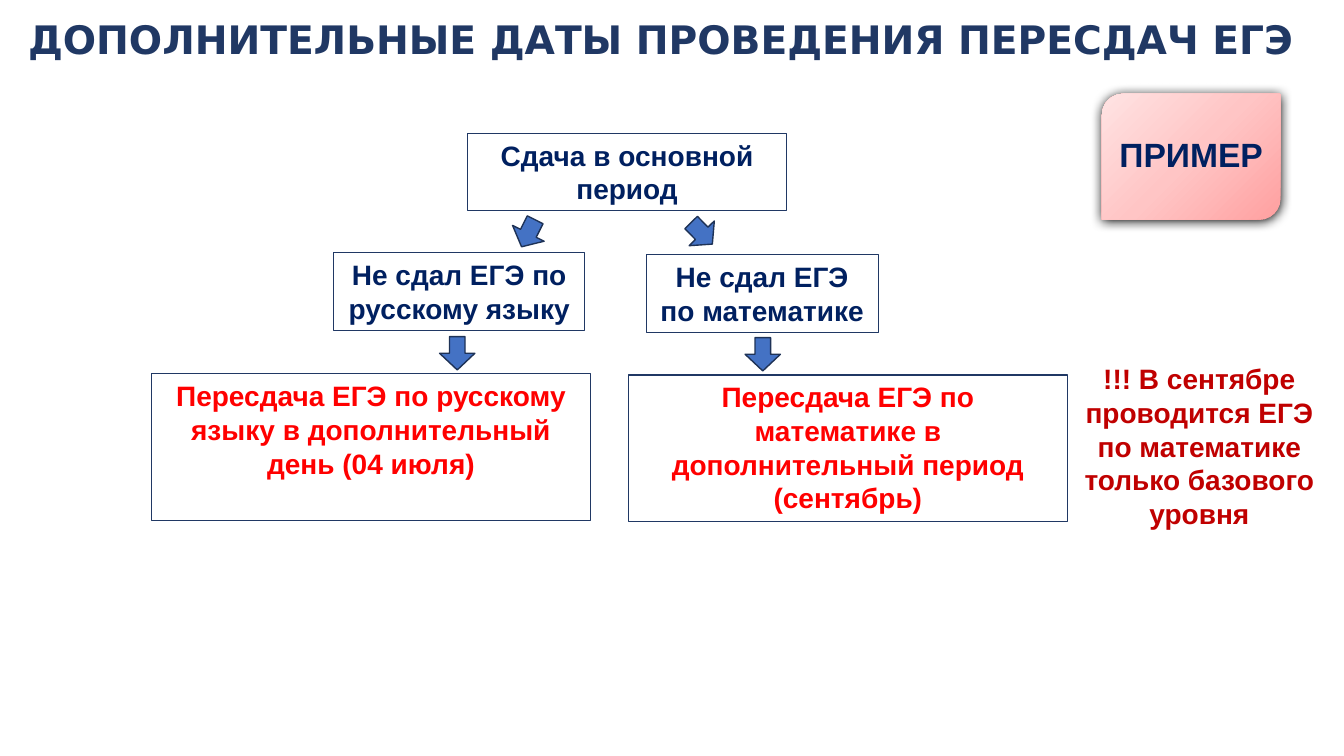
from dataclasses import dataclass

from lxml.etree import SubElement
from pptx import Presentation
from pptx.dml.color import RGBColor
from pptx.enum.shapes import MSO_SHAPE as Shape
from pptx.enum.text import MSO_ANCHOR as Anchor, PP_ALIGN as Align
from pptx.oxml import parse_xml
from pptx.oxml.ns import nsdecls, qn
from pptx.util import Inches, Pt


@dataclass(frozen=True)
class Theme:
    """Colours, fonts and type sizes of the slide."""
    navy: str = "203864"
    ink: str = "002060"
    alert: str = "FF0000"
    warning: str = "C00000"
    arrow: str = "4472C4"
    arrow_edge: str = "1E3256"
    shadow: str = "000000"
    badge: tuple = ((0, "FFA0A0"), (50, "FFC5C5"), (100, "FFE3E3"))
    title_font: str = "DejaVu Sans"
    body_font: str = "Arial"
    title_size: int = 28
    badge_size: int = 24
    body_size: int = 20


@dataclass(frozen=True)
class Box:
    """A rectangle in inches."""
    left: float
    top: float
    width: float
    height: float

    def inner(self, left, top, width, height):
        """Return a box placed relative to this one."""
        return Box(self.left + left, self.top + top, width, height)

    def lengths(self):
        """Return position and size as slide lengths."""
        return [Inches(value) for value in
                (self.left, self.top, self.width, self.height)]


THEME = Theme()


def write(shape, text, color, size=THEME.body_size, font=THEME.body_font,
          align=Align.CENTER, anchor=Anchor.TOP):
    """Fill a shape with one bold paragraph and return the paragraph."""
    frame = shape.text_frame
    frame.text = text
    frame.word_wrap = True
    frame.vertical_anchor = anchor
    paragraph = frame.paragraphs[0]
    paragraph.alignment = align
    run_font = paragraph.runs[0].font
    run_font.name = font
    run_font.size = Pt(size)
    run_font.bold = True
    run_font.color.rgb = RGBColor.from_string(color)
    return paragraph


def add_preset(slide, box, kind, edge=None, weight=1, fill=None):
    """Add a preset shape with a plain outline and fill."""
    shape = slide.shapes.add_shape(kind, *box.lengths())
    shape.shadow.inherit = False
    if fill:
        shape.fill.solid()
        shape.fill.fore_color.rgb = RGBColor.from_string(fill)
    else:
        shape.fill.background()
    if edge:
        shape.line.color.rgb = RGBColor.from_string(edge)
        shape.line.width = Pt(weight)
    else:
        shape.line.fill.background()
    return shape


def add_title(slide, box):
    """Add the slide heading."""
    shape = slide.shapes.add_textbox(*box.lengths())
    paragraph = write(shape, "ДОПОЛНИТЕЛЬНЫЕ ДАТЫ ПРОВЕДЕНИЯ ПЕРЕСДАЧ ЕГЭ",
                      THEME.navy, THEME.title_size, THEME.title_font,
                      Align.LEFT, Anchor.MIDDLE)
    paragraph.line_spacing = 0.9


def add_flowchart(slide, box):
    """Add the steps from the main exam period to the resits."""
    steps = (
        ((3.14, 0, 3.16, 0.77), "Сдача в основной период", THEME.ink),
        ((1.81, 1.19, 2.49, 0.77), "Не сдал ЕГЭ по русскому языку", THEME.ink),
        ((4.91, 1.21, 2.3, 0.77), "Не сдал ЕГЭ по математике", THEME.ink),
        ((0, 2.39, 4.36, 1.45),
         "Пересдача ЕГЭ по русскому языку в дополнительный день (04 июля)",
         THEME.alert),
        ((4.73, 2.4, 4.36, 1.45),
         "Пересдача ЕГЭ по математике в дополнительный период (сентябрь)",
         THEME.alert),
    )
    for place, text, color in steps:
        step = add_preset(slide, box.inner(*place), Shape.RECTANGLE,
                          THEME.navy, 0.75)
        write(step, text, color)

    arrows = (
        ((3.59, 0.82, 0.3, 0.35), 116.7, 0.5),
        ((5.31, 0.82, 0.3, 0.35), 45.5, 0.5),
        ((2.87, 2.01, 0.33, 0.35), 90, 0.44),
        ((5.9, 2.02, 0.33, 0.35), 90, 0.44),
    )
    for place, angle, shaft in arrows:
        arrow = add_preset(slide, box.inner(*place), Shape.RIGHT_ARROW,
                           THEME.arrow_edge, 1, THEME.arrow)
        arrow.rotation = angle
        arrow.adjustments[0] = shaft
        arrow.adjustments[1] = 0.5


def add_note(slide, box):
    """Add the remark about the September exam."""
    shape = slide.shapes.add_textbox(*box.lengths())
    write(shape,
          "!!! В сентябре проводится ЕГЭ по математике только базового уровня",
          THEME.warning)


def add_badge(slide, box):
    """Add the shaded example badge."""
    badge = add_preset(slide, box, Shape.ROUND_2_DIAG_RECTANGLE)
    properties = badge.element.spPr
    stops = "".join(f'<a:gs pos="{position * 1000}"><a:srgbClr val="{color}"/></a:gs>'
                    for position, color in THEME.badge)
    gradient = parse_xml(f'<a:gradFill {nsdecls("a")}><a:gsLst>{stops}</a:gsLst>'
                         '<a:lin ang="13500000" scaled="0"/></a:gradFill>')
    properties.replace(properties.find(qn("a:noFill")), gradient)
    shadow = SubElement(properties.find(qn("a:effectLst")), qn("a:outerShdw"),
                        blurRad=str(Pt(8.5)), dist=str(Pt(1)), dir="5400000",
                        algn="ctr", rotWithShape="0")
    SubElement(shadow, qn("a:srgbClr"), val=THEME.shadow)
    write(badge, "ПРИМЕР", THEME.ink, THEME.badge_size, anchor=Anchor.MIDDLE)
    frame = badge.text_frame
    frame.margin_left = frame.margin_right = frame.margin_top = 0
    frame.margin_bottom = Inches(0.06)


def main():
    """Build and save the presentation."""
    presentation = Presentation()
    presentation.slide_width = Inches(13.33)
    presentation.slide_height = Inches(7.5)
    slide = presentation.slides.add_slide(presentation.slide_layouts[6])
    add_title(slide, Box(0.18, 0.14, 12.91, 0.55))
    add_flowchart(slide, Box(1.5, 1.32, 9.09, 3.85))
    add_note(slide, Box(10.52, 3.54, 2.75, 1.78))
    add_badge(slide, Box(10.93, 0.93, 1.77, 1.25))
    presentation.save("out.pptx")


if __name__ == "__main__":
    main()
